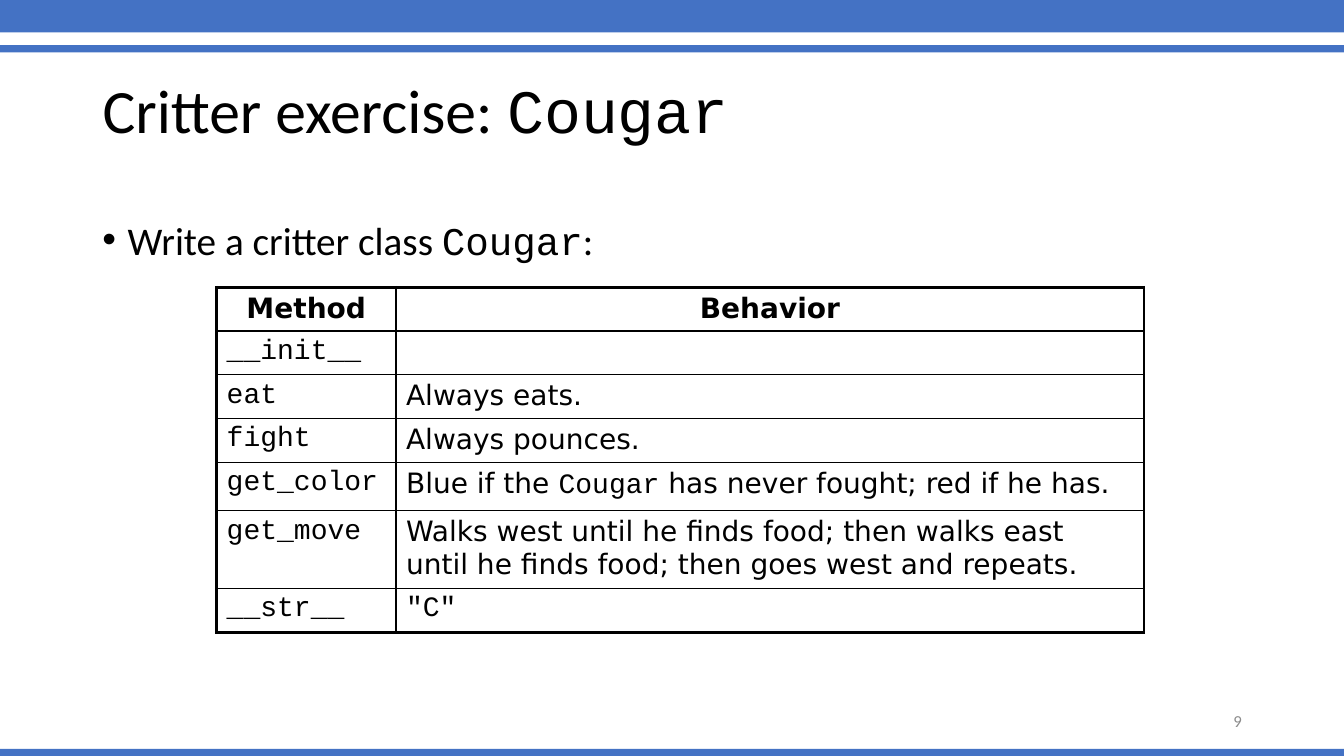
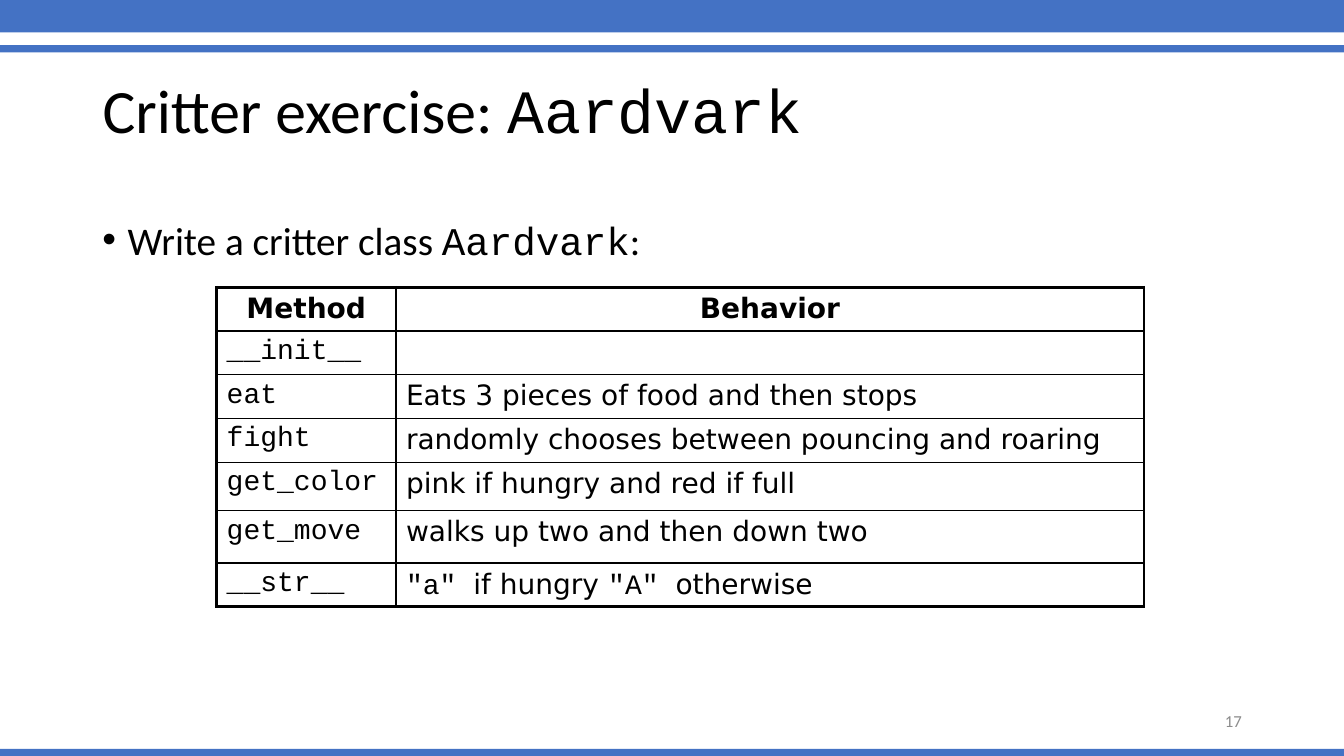
from lxml.etree import SubElement as Sub
from pptx import Presentation
from pptx.dml.color import RGBColor
from pptx.enum.shapes import MSO_SHAPE as Shape
from pptx.enum.text import MSO_ANCHOR as Anchor, PP_ALIGN as Align
from pptx.oxml.ns import qn
from pptx.util import Cm, Pt

BLUE = RGBColor(0x44, 0x72, 0xC4)
BLACK = RGBColor(0, 0, 0)
GREY = RGBColor(0x8C, 0x8C, 0x8C)
SANS, MONO, PLAIN = "Calibri", "Courier New", "DejaVu Sans"
WIDE, HIGH = 33.87, 19.05
TITLE = (2.33, 1.02, 29.21, 3.68)
BODY = (2.33, 5.08, 29.21, 12.09)
PAGE = (23.93, 17.65, 7.62, 1.02)
BANDS = ((0, 0.82), (1.14, 0.18), (18.87, 0.18))
COLS = (4.52, 18.85)
ROW = 1.09
THICK, THIN = 2.25, 1
METHODS = ("__init__", "eat", "fight", "get_color", "get_move", "__str__")

CRITTERS = (
    ("Cougar", 9, 1.96, (
        "",
        "Always eats.",
        "Always pounces.",
        "Blue if the `Cougar` has never fought; red if he has.",
        "Walks west until he finds food; then walks east until he finds food; "
        "then goes west and repeats.",
        '`"C"`')),
    ("Aardvark", 17, 1.32, (
        "",
        "Eats 3 pieces of food and then stops",
        "randomly chooses between pouncing and roaring",
        "pink if hungry and red if full",
        "walks up two and then down two",
        '`"a" `if hungry `"A" `otherwise')),
)


def write(frame, text, size=20, font=SANS, color=BLACK, bold=False,
          align=Align.LEFT, anchor=Anchor.TOP, line=None, before=None):
    """Sets the text of a frame; parts between backticks are code."""
    frame.word_wrap = True
    frame.vertical_anchor = anchor
    para = frame.paragraphs[0]
    para.alignment = align
    para.line_spacing = line
    para.space_before = before
    for pos, part in enumerate(text.split("`")):
        if part:
            run = para.add_run()
            run.text = part
            run.font.name = MONO if pos % 2 else font
            run.font.size = Pt(size)
            run.font.bold = bold
            run.font.color.rgb = color
    return para


def place(shape, box):
    shape.left, shape.top, shape.width, shape.height = map(Cm, box)


def add_bands(slide, layout):
    tree = layout.shapes.element
    for pos, (top, high) in enumerate(BANDS):
        band = slide.shapes.add_shape(
            Shape.RECTANGLE, 0, Cm(top), Cm(WIDE), Cm(high))
        band.shadow.inherit = False
        band.fill.solid()
        band.fill.fore_color.rgb = BLUE
        band.line.fill.background()
        band.element.nvSpPr.cNvPr.set("id", str(100 + pos))
        tree.append(band.element)


def add_title(slide, box, name):
    title = slide.shapes.title
    place(title, box)
    write(title.text_frame, f"Critter exercise: `{name}`", size=44,
          anchor=Anchor.MIDDLE, line=0.9)


def add_task(slide, box, name):
    task = slide.shapes.add_textbox(*map(Cm, box))
    para = write(task.text_frame, f"Write a critter class `{name}`:",
                 size=28, line=1.2, before=Pt(10))
    props = para._p.get_or_add_pPr()
    props.set("marL", str(Cm(0.64)))
    props.set("indent", str(-Cm(0.64)))
    Sub(props, qn("a:buFont"), typeface="Arial")
    Sub(props, qn("a:buChar"), char="•")


def set_edges(cell, sides):
    props = cell._tc.get_or_add_tcPr()
    for side, outer in sides.items():
        edge = Sub(props, qn(f"a:ln{side}"), w=str(Pt(THICK if outer else THIN)))
        fill = Sub(edge, qn("a:solidFill"))
        Sub(fill, qn("a:srgbClr"), val=str(BLACK))
    cell.fill.background()


def add_grid(slide, box, rows, highs):
    left, top = box[0] + 3.13, box[1] + 2.16
    table = slide.shapes.add_table(
        len(rows), len(COLS), Cm(left), Cm(top), Cm(sum(COLS)),
        Cm(sum(highs))).table
    table.first_row = table.horz_banding = False
    for col, wide in zip(table.columns, COLS):
        col.width = Cm(wide)
    for y, (row, high) in enumerate(zip(rows, highs)):
        table.rows[y].height = Cm(high)
        for x, text in enumerate(row):
            cell = table.cell(y, x)
            head = y == 0
            write(cell.text_frame, text, font=PLAIN, bold=head,
                  align=Align.CENTER if head else Align.LEFT)
            set_edges(cell, {"L": x == 0, "R": x == len(COLS) - 1,
                             "T": head, "B": y == len(rows) - 1})


def add_page(slide, box, page):
    label = slide.shapes.add_textbox(*map(Cm, box))
    write(label.text_frame, str(page), size=12, color=GREY,
          align=Align.RIGHT, anchor=Anchor.MIDDLE)


def add_slide(deck, layout, name, page, tall, acts):
    slide = deck.slides.add_slide(layout)
    rows = [("Method", "Behavior")]
    rows += [(f"`{method}`", act) for method, act in zip(METHODS, acts)]
    add_title(slide, TITLE, name)
    add_task(slide, BODY, name)
    add_grid(slide, BODY, rows, [ROW] * 4 + [1.22, tall, ROW])
    add_page(slide, PAGE, page)
    return slide


def main():
    deck = Presentation()
    deck.slide_width, deck.slide_height = Cm(WIDE), Cm(HIGH)
    layout = deck.slide_layouts.get_by_name("Title Only")
    slides = [add_slide(deck, layout, *critter) for critter in CRITTERS]
    add_bands(slides[0], layout)
    deck.save("out.pptx")


if __name__ == "__main__":
    main()
